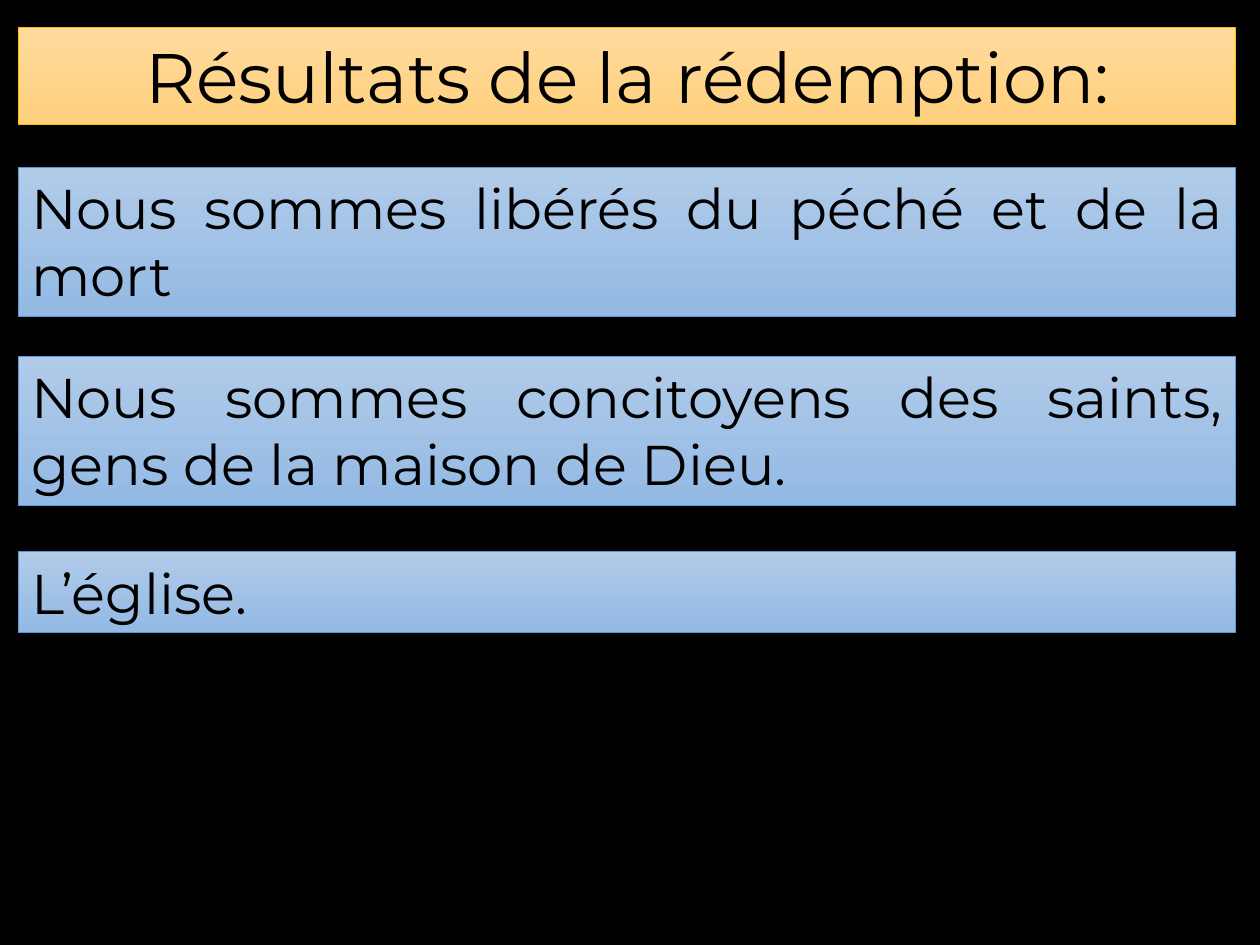
from dataclasses import dataclass

from pptx import Presentation
from pptx.dml.color import RGBColor
from pptx.enum.shapes import MSO_SHAPE
from pptx.enum.text import MSO_ANCHOR, MSO_AUTO_SIZE, PP_ALIGN
from pptx.util import Inches, Pt


@dataclass(frozen=True)
class BannerStyle:
    """Colours, type size and alignment of one kind of banner."""
    gradient: tuple
    line: str
    size: int
    alignment: PP_ALIGN


@dataclass(frozen=True)
class Theme:
    """Shared look of the slide."""
    font: str = "Montserrat"
    background: str = "000000"
    text: str = "000000"
    line_width: float = 0.5
    title: BannerStyle = BannerStyle(("FFDB9E", "FFD07C"), "FFC000", 40, PP_ALIGN.CENTER)
    result: BannerStyle = BannerStyle(("B1CBE9", "93B9E4"), "5B9BD5", 32, PP_ALIGN.JUSTIFY)


THEME = Theme()
LEFT, WIDTH = 0.15, 9.66
RESULTS = [
    (1.33, 1.18, "Nous sommes libérés du péché et de la mort"),
    (2.83, 1.18, "Nous sommes concitoyens des saints, gens de la maison de Dieu."),
    (4.38, 0.64, "L’église."),
]


def set_background(slide):
    """Fill the slide background with the theme colour."""
    fill = slide.background.fill
    fill.solid()
    fill.fore_color.rgb = RGBColor.from_string(THEME.background)


def paint_banner(shape, style):
    """Give a banner its vertical gradient and thin outline."""
    shape.shadow.inherit = False
    shape.fill.gradient()
    shape.fill.gradient_angle = 270
    for stop, color, position in zip(shape.fill.gradient_stops, style.gradient, (0, 1)):
        stop.color.rgb = RGBColor.from_string(color)
        stop.position = position
    shape.line.color.rgb = RGBColor.from_string(style.line)
    shape.line.width = Pt(THEME.line_width)


def write_text(shape, text, style):
    """Set and format the text of a banner."""
    text_frame = shape.text_frame
    text_frame.text = text
    text_frame.word_wrap = True
    text_frame.auto_size = MSO_AUTO_SIZE.SHAPE_TO_FIT_TEXT
    text_frame.vertical_anchor = MSO_ANCHOR.TOP
    paragraph = text_frame.paragraphs[0]
    paragraph.alignment = style.alignment
    font = paragraph.runs[0].font
    font.name = THEME.font
    font.size = Pt(style.size)
    font.color.rgb = RGBColor.from_string(THEME.text)


def add_banner(slide, top, height, text, style):
    """Add one full-width banner with text."""
    shape = slide.shapes.add_shape(
        MSO_SHAPE.RECTANGLE, Inches(LEFT), Inches(top), Inches(WIDTH), Inches(height))
    paint_banner(shape, style)
    write_text(shape, text, style)


def main():
    """Build the slide and save it."""
    presentation = Presentation()
    presentation.slide_width = Inches(10)
    presentation.slide_height = Inches(7.5)
    slide = presentation.slides.add_slide(presentation.slide_layouts[6])
    set_background(slide)
    add_banner(slide, 0.22, 0.77, "Résultats de la rédemption:", THEME.title)
    for top, height, text in RESULTS:
        add_banner(slide, top, height, text, THEME.result)
    presentation.save("out.pptx")


if __name__ == "__main__":
    main()
